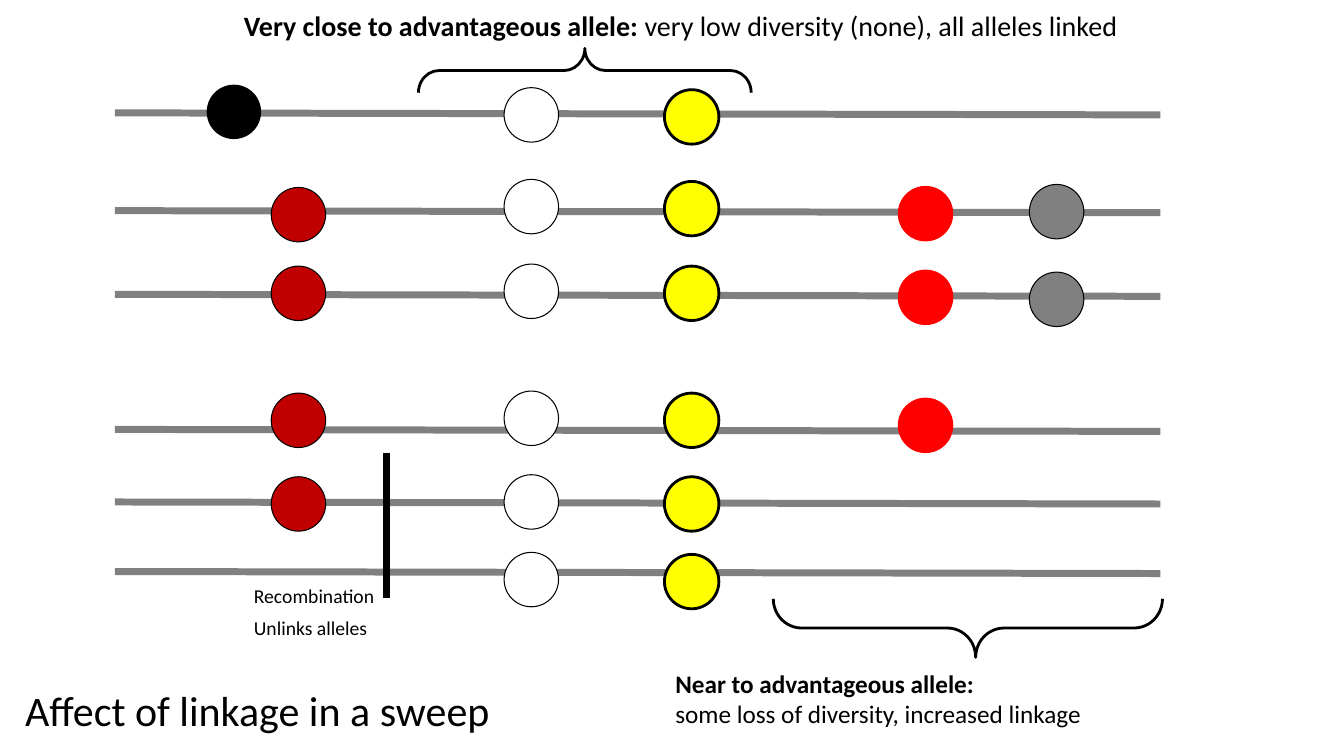
from dataclasses import dataclass

from lxml import etree
from pptx import Presentation, util as u
from pptx.dml.color import RGBColor
from pptx.enum import shapes, text
from pptx.oxml.ns import qn


@dataclass(frozen=True)
class Theme:
    font: str = "Calibri"
    ink: str = "000000"
    strand: str = "808080"
    neutral: str = "FFFFFF"
    advantageous: str = "FFFF00"
    near: str = "FF0000"
    far: str = "808080"
    unlinked: str = "C00000"
    title_size: int = 30
    close_size: int = 20
    near_size: int = 18
    note_size: int = 14
    thin: float = 0.75
    medium: float = 2
    thick: float = 5


theme = Theme()
deck = Presentation()
deck.slide_width, deck.slide_height = u.Inches(13.33), u.Inches(7.5)
slide = deck.slides.add_slide(deck.slide_layouts[5])

# The slide is a grid of 133.3 columns by 75 rows of square cells
cell = deck.slide_height / 75


def grid(*counts):
    return [u.Emu(round(count * cell)) for count in counts]


def write(frame, paragraphs, size, space_before=0):
    """Fill a frame with paragraphs, each a list of (words, bold) pairs."""
    frame.word_wrap = False
    frame.auto_size = text.MSO_AUTO_SIZE.NONE
    frame.vertical_anchor = text.MSO_ANCHOR.TOP
    for index, pieces in enumerate(paragraphs):
        paragraph = frame.add_paragraph() if index else frame.paragraphs[0]
        paragraph.alignment = text.PP_ALIGN.LEFT
        paragraph.space_before = u.Pt(space_before)
        for words, bold in pieces:
            run = paragraph.add_run()
            run.text = words
            run.font.name, run.font.size, run.font.bold = theme.font, u.Pt(size), bold
            run.font.color.rgb = RGBColor.from_string(theme.ink)


title = slide.shapes.title
title.left, title.top, title.width, title.height = grid(1.5, 67.4, 48.6, 6.1)
write(title.text_frame, [[("Affect of linkage in a sweep", False)]], theme.title_size, 6)

# Allele: column, fill, outline colour, outline width
alleles = {
    "first": (20.5, theme.ink, None, 0),
    "unlinked": (26.9, theme.unlinked, theme.ink, theme.thin),
    "neutral": (50, theme.neutral, theme.ink, theme.thin),
    "advantageous": (65.9, theme.advantageous, theme.ink, theme.medium),
    "near": (89.1, theme.near, theme.near, theme.thin),
    "far": (102.1, theme.far, theme.ink, theme.thin),
}

# Chromosome: row of its strand, then the top row of each allele it carries
chromosomes = [
    (11.2, {"first": 8.4, "neutral": 8.7, "advantageous": 8.9}),
    (20.9, {"unlinked": 18.6, "neutral": 17.8, "advantageous": 18, "near": 18.5, "far": 18.3}),
    (29.2, {"unlinked": 26.4, "neutral": 26.2, "advantageous": 26.4, "near": 26.8, "far": 27}),
    (42.6, {"unlinked": 39, "neutral": 38.8, "advantageous": 39, "near": 39.5}),
    (49.8, {"unlinked": 47.3, "neutral": 47.1, "advantageous": 47.3}),
    (56.7, {"neutral": 54.8, "advantageous": 55}),
]

strands = [((11.4, row, 115.1, row + 0.2), theme.strand) for row, _ in chromosomes]
recombination = ((38.3, 44.9, 38.3, 59.3), theme.ink)
for ends, colour in strands + [recombination]:
    line = slide.shapes.add_connector(shapes.MSO_CONNECTOR.STRAIGHT, *grid(*ends))
    line.line.color.rgb = RGBColor.from_string(colour)
    line.line.width = u.Pt(theme.thick)
    etree.SubElement(line._element.spPr, qn("a:effectLst"))

diameter = 5.4
for _, carried in chromosomes:
    for allele, top in carried.items():
        column, fill, outline, width = alleles[allele]
        dot = slide.shapes.add_shape(
            shapes.MSO_SHAPE.OVAL, *grid(column, top, diameter, diameter))
        dot.shadow.inherit = False
        dot.fill.solid()
        dot.fill.fore_color.rgb = RGBColor.from_string(fill)
        if outline:
            dot.line.color.rgb = RGBColor.from_string(outline)
            dot.line.width = u.Pt(width)
        else:
            dot.line.fill.background()

# Braces are placed before turning: the first opens down, the second up
for place, turn, bends in [
    ((55.8, -9.5, 4.4, 33), 90, (0.466, 0.5)),
    ((93.1, 43, 5.8, 38.6), 270, (0.484, 0.52)),
]:
    brace = slide.shapes.add_shape(shapes.MSO_SHAPE.LEFT_BRACE, *grid(*place))
    brace.rotation = turn
    brace.adjustments[0], brace.adjustments[1] = bends
    brace.shadow.inherit = False
    brace.fill.background()
    brace.line.color.rgb = RGBColor.from_string(theme.ink)
    brace.line.width = u.Pt(theme.medium)

for place, paragraphs, size, space_before in [
    ((23.2, 0.4, 91.4, 4.4),
     [[("Very close to advantageous allele: ", True),
       ("very low diversity (none), all alleles linked", False)]],
     theme.close_size, 6),
    ((66, 65.8, 42.7, 7.1),
     [[("Near to advantageous allele:", True)],
      [("some loss of diversity, increased linkage", False)]],
     theme.near_size, 0),
    ((24.2, 57.4, 14.1, 6.6),
     [[("Recombination", False)], [("Unlinks alleles", False)]],
     theme.note_size, 6),
]:
    label = slide.shapes.add_textbox(*grid(*place))
    write(label.text_frame, paragraphs, size, space_before)

deck.save("out.pptx")
